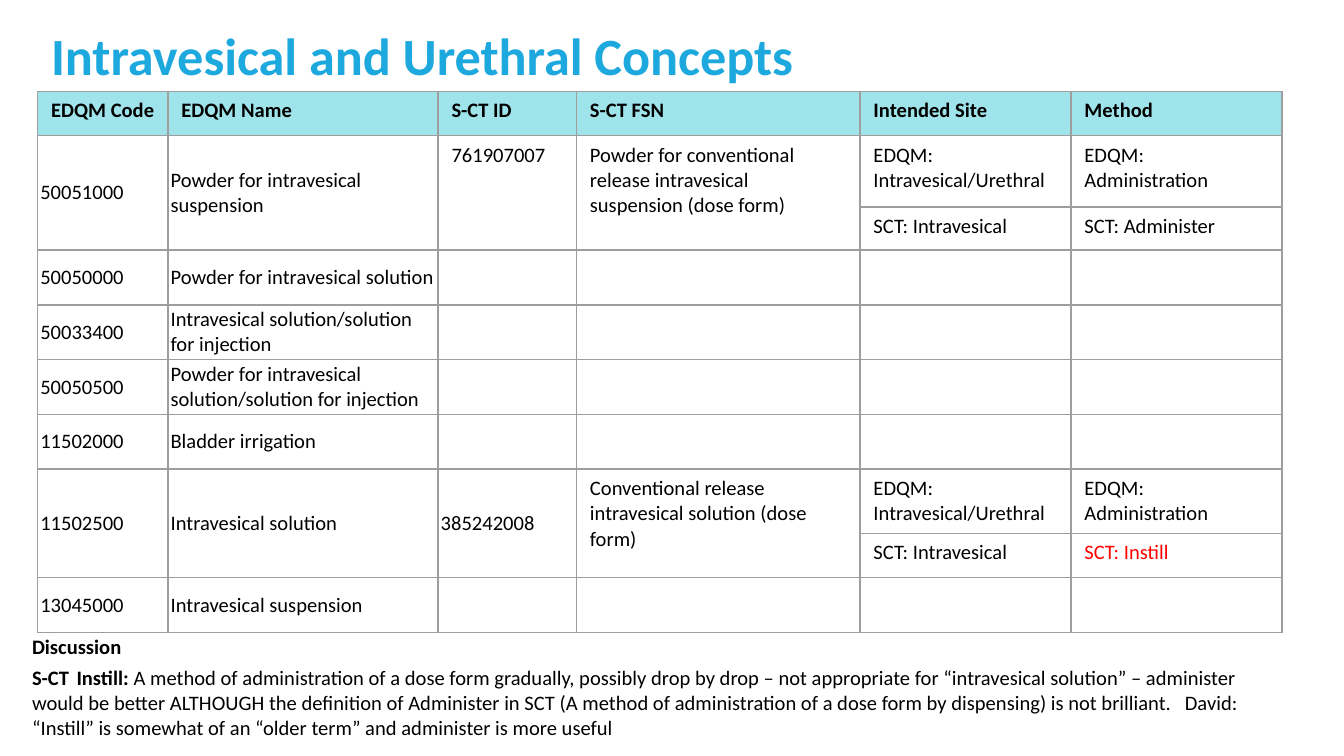
from dataclasses import dataclass

from lxml.etree import SubElement
from pptx import Presentation
from pptx.dml.color import RGBColor
from pptx.enum.text import MSO_ANCHOR, MSO_AUTO_SIZE, PP_ALIGN
from pptx.oxml.ns import qn
from pptx.util import Inches, Pt

TITLE_BLUE = RGBColor(0x1D, 0xA8, 0xDE)
HEADER_FILL = RGBColor(0xA0, 0xE4, 0xEB)
BORDER = RGBColor(0x9E, 0x9E, 0x9E)
BLACK = RGBColor(0, 0, 0)
RED = RGBColor(0xFF, 0, 0)

SLIDE_WIDTH = Inches(10)
SLIDE_HEIGHT = SLIDE_WIDTH * 9 // 16

COLUMNS = (0.97, 2.01, 1.03, 2.11, 1.57, 1.57)
ROWS = (0.33, 0.53, 0.32, 0.41, 0.4, 0.41, 0.4, 0.33, 0.33, 0.41)
HEADINGS = ("EDQM Code", "EDQM Name", "S-CT ID", "S-CT FSN", "Intended Site", "Method")
MERGED_COLUMNS = 4


@dataclass
class Concept:
    code: str
    name: str
    sct_id: str = ""
    fsn: str = ""
    sct_method: str = ""
    tight: int = 2  # leading columns with narrow margins, centred vertically
    method_color: RGBColor = BLACK


CONCEPTS = (
    Concept("50051000", "Powder for intravesical suspension", "761907007",
            "Powder for conventional release intravesical suspension (dose form)",
            "SCT: Administer"),
    Concept("50050000", "Powder for intravesical solution"),
    Concept("50033400", "Intravesical solution/solution for injection"),
    Concept("50050500", "Powder for intravesical solution/solution for injection"),
    Concept("11502000", "Bladder irrigation"),
    Concept("11502500", "Intravesical solution", "385242008",
            "Conventional release intravesical solution (dose form)",
            "SCT: Instill", tight=3, method_color=RED),
    Concept("13045000", "Intravesical suspension"),
)


def style(r, size: float = 11, bold: bool = False, color: RGBColor = BLACK,
          face: str = "Calibri") -> None:
    r.font.name, r.font.size, r.font.bold = face, Pt(size), bold
    r.font.color.rgb = color


def add_borders(cell) -> None:
    tc_pr = cell._tc.get_or_add_tcPr()
    for i, side in enumerate(("lnL", "lnR", "lnT", "lnB")):
        ln = tc_pr.makeelement(qn(f"a:{side}"), {"w": str(Pt(0.75))})
        fill = SubElement(ln, qn("a:solidFill"))
        SubElement(fill, qn("a:srgbClr"), val=str(BORDER))
        tc_pr.insert(i, ln)


def write(cell, text: str, bold: bool = False, color: RGBColor = BLACK,
          tight: bool = False) -> None:
    cell.text = text
    for r in cell.text_frame.paragraphs[0].runs:
        style(r, bold=bold, color=color)
    if tight:
        cell.vertical_anchor = MSO_ANCHOR.MIDDLE
        cell.margin_left = cell.margin_right = Inches(0.02)
        cell.margin_top = cell.margin_bottom = Inches(0.01)


def add_concept(table, row: int, concept: Concept) -> int:
    """Write one concept and return the next free row."""
    values = (concept.code, concept.name, concept.sct_id, concept.fsn)
    for col, text in enumerate(values):
        if text:
            write(table.cell(row, col), text, tight=col < concept.tight)
    if not concept.sct_method:
        return row + 1
    for col in range(MERGED_COLUMNS):
        table.cell(row, col).merge(table.cell(row + 1, col))
    write(table.cell(row, 4), "EDQM: Intravesical/Urethral")
    write(table.cell(row, 5), "EDQM: Administration")
    write(table.cell(row + 1, 4), "SCT: Intravesical")
    write(table.cell(row + 1, 5), concept.sct_method, color=concept.method_color)
    return row + 2


def add_title(s) -> None:
    sp = s.shapes.title
    sp.left, sp.top, sp.width, sp.height = map(Inches, (0.31, -0.11, 8.62, 1.09))
    tf = sp.text_frame
    tf.text = "Intravesical and Urethral Concepts"
    tf.vertical_anchor = MSO_ANCHOR.MIDDLE
    tf.margin_left = tf.margin_right = Inches(0.07)
    tf.margin_top = tf.margin_bottom = Inches(0.04)
    p = tf.paragraphs[0]
    p.alignment, p.line_spacing = PP_ALIGN.LEFT, 0.9
    style(p.runs[0], 28, True, TITLE_BLUE)


def add_concept_table(s) -> None:
    table = s.shapes.add_table(len(ROWS), len(COLUMNS), Inches(0.28), Inches(0.68),
                               Inches(sum(COLUMNS)), Inches(sum(ROWS))).table
    table.horz_banding = False
    for column, width in zip(table.columns, COLUMNS):
        column.width = Inches(width)
    for i, height in enumerate(ROWS):
        table.rows[i].height = Inches(height)
        for cell in table.rows[i].cells:
            if i == 0:
                cell.fill.solid()
                cell.fill.fore_color.rgb = HEADER_FILL
            else:
                cell.fill.background()
            add_borders(cell)
    for col, heading in enumerate(HEADINGS):
        write(table.cell(0, col), heading, bold=True)
    row = 1
    for concept in CONCEPTS:
        row = add_concept(table, row, concept)


def add_discussion(s) -> None:
    tf = s.shapes.add_textbox(*map(Inches, (0.14, 4.67, 9.53, 0.89))).text_frame
    tf.word_wrap = True
    tf.auto_size = MSO_AUTO_SIZE.SHAPE_TO_FIT_TEXT
    p = tf.paragraphs[0]
    p.text = "Discussion\vS-CT"
    for r in p.runs:
        style(r, bold=True)
    # The line break needs its own size, or it makes the first line taller
    for br in p._p.findall(qn("a:br")):
        SubElement(br, qn("a:rPr"), sz="1100")
    for text, size, face, bold in (
        (" ", 14, "Arial", True),
        ("Instill: ", 11, "Calibri", True),
        ("A method of administration of a dose form gradually, possibly drop by drop – "
         "not appropriate for “intravesical solution” – administer would be better "
         "ALTHOUGH the definition of Administer in SCT (A method of administration of a "
         "dose form by dispensing) is not brilliant.   David: “Instill” is somewhat of "
         "an “older term” and administer is more useful", 11, "Calibri", False),
    ):
        r = p.add_run()
        r.text = text
        style(r, size, bold, face=face)


def main() -> None:
    prs = Presentation()
    prs.slide_width, prs.slide_height = SLIDE_WIDTH, SLIDE_HEIGHT
    s = prs.slides.add_slide(prs.slide_layouts[5])
    add_title(s)
    add_concept_table(s)
    add_discussion(s)
    prs.save("out.pptx")


if __name__ == "__main__":
    main()
